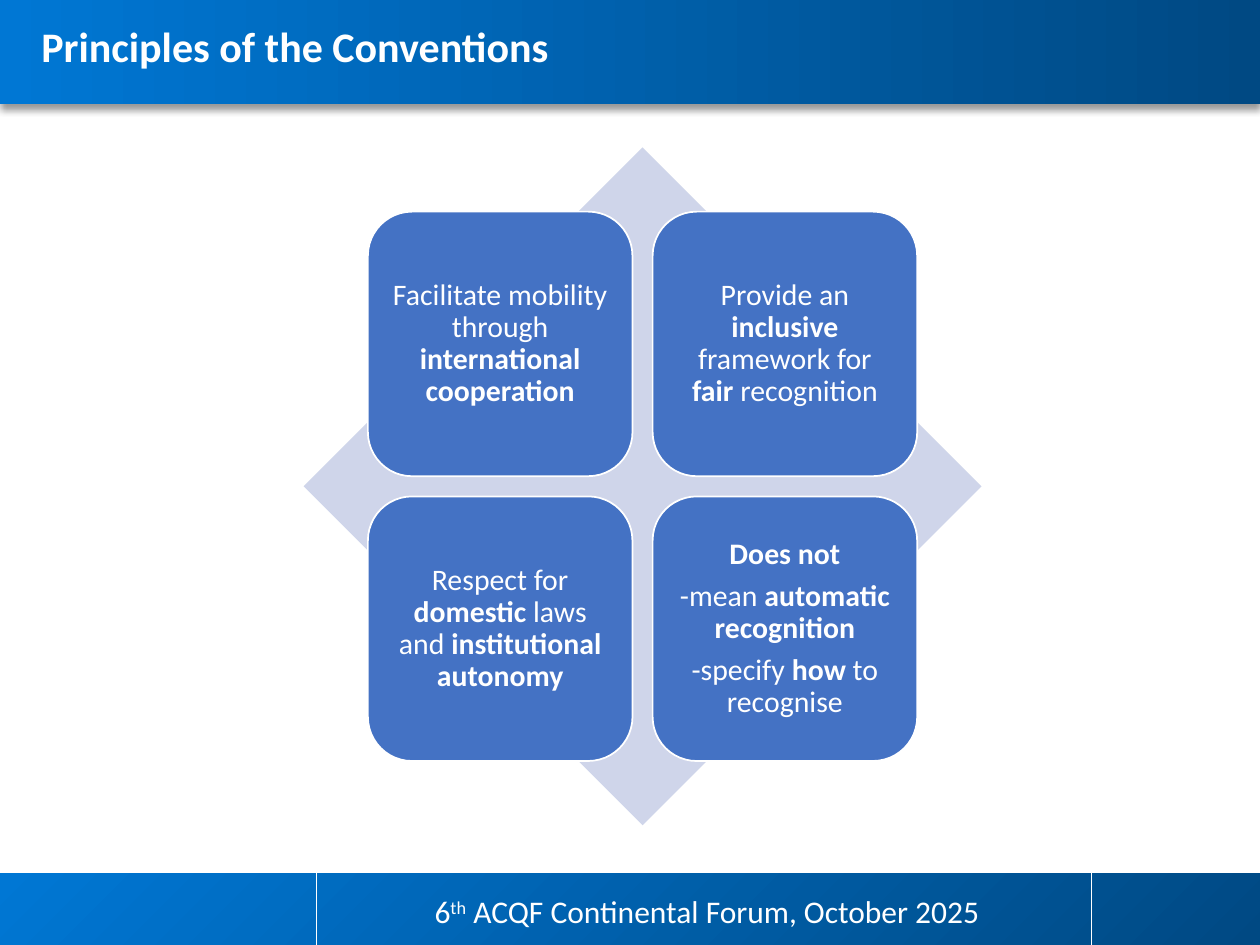
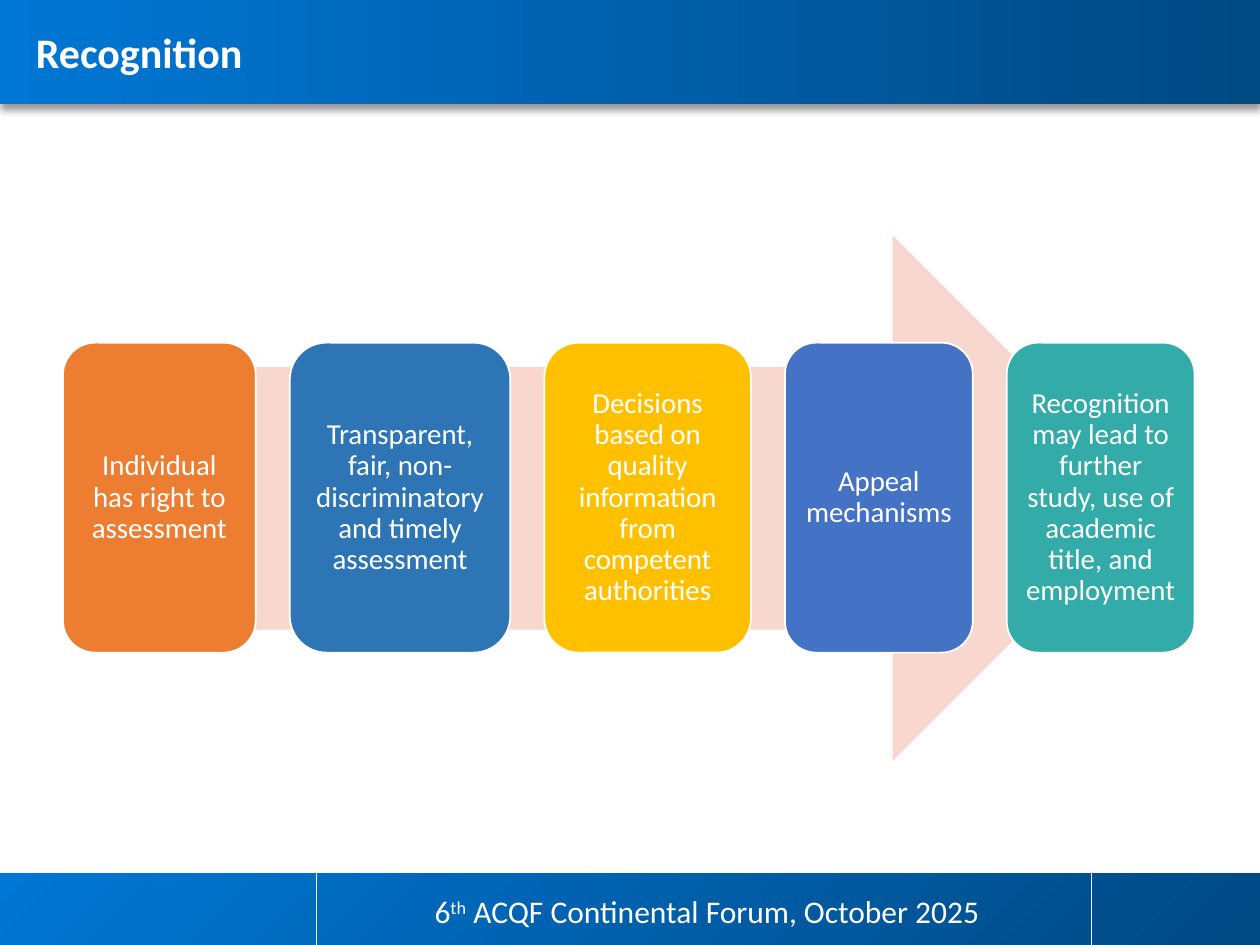
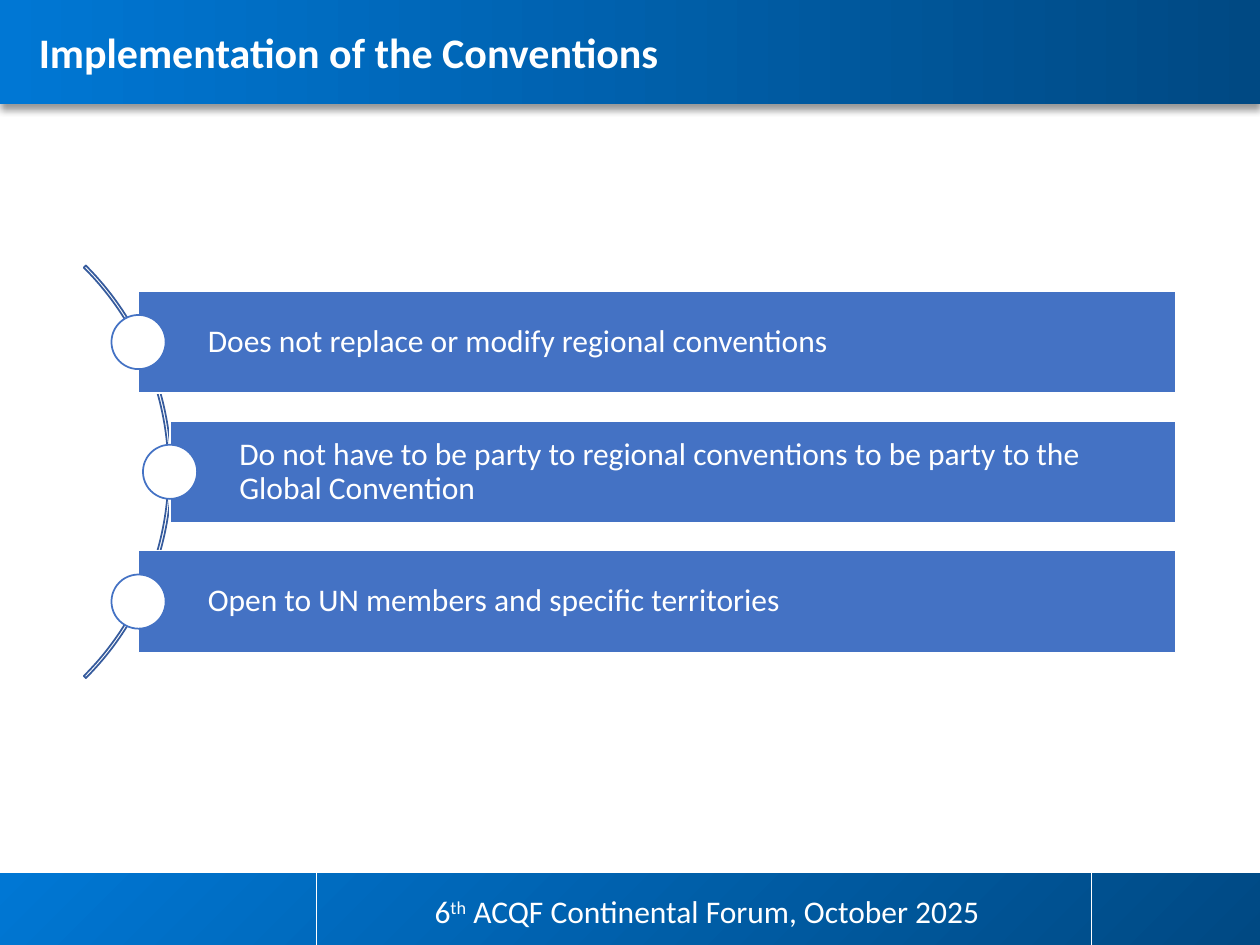
import pptx
import pptx.util
from lxml import etree
from pptx.dml.color import RGBColor
from pptx.enum.shapes import MSO_CONNECTOR, MSO_SHAPE
from pptx.enum.text import MSO_ANCHOR, PP_ALIGN
from pptx.oxml.ns import qn
from pptx.util import Inches, Pt

WHITE = RGBColor(0xFF, 0xFF, 0xFF)
BRIGHT_BLUE = RGBColor(0x00, 0x77, 0xD4)
DEEP_BLUE = RGBColor(0x00, 0x49, 0x83)
BLUE = RGBColor(0x44, 0x72, 0xC4)
STEEL_BLUE = RGBColor(0x2E, 0x75, 0xB6)
ARC_BLUE = RGBColor(0x36, 0x5B, 0x9D)
PALE_BLUE = RGBColor(0xCF, 0xD5, 0xEA)
ORANGE = RGBColor(0xED, 0x7D, 0x31)
YELLOW = RGBColor(0xFF, 0xC0, 0x00)
TEAL = RGBColor(0x33, 0xAB, 0xA8)
PALE_ORANGE = RGBColor(0xF8, 0xD7, 0xCE)
FONT = "Calibri"

# Double asterisks switch bold on and off.
FOOTER = ("6", "th", " ACQF Continental Forum, October 2025")
PRINCIPLES = [
    ["Facilitate mobility through **international cooperation**"],
    ["Provide an **inclusive** framework for **fair** recognition"],
    ["Respect for **domestic** laws and **institutional autonomy**"],
    ["**Does not**", "-mean **automatic recognition**", "-specify **how** to recognise"],
]
RECOGNITION_STEPS = [
    ("Individual has right to assessment", 1.53, ORANGE),
    ("Transparent, fair, non-discriminatory and timely assessment", 1.75, STEEL_BLUE),
    ("Decisions based on quality information from competent authorities", 1.64, YELLOW),
    ("Appeal mechanisms", 1.49, BLUE),
    ("Recognition may lead to further study, use of academic title, and employment", 1.49, TEAL),
]
IMPLEMENTATION = [
    (1.1, "Does not replace or modify regional conventions"),
    (1.35, "Do not have to be party to regional conventions to be party to the\nGlobal Convention"),
    (1.1, "Open to UN members and specific territories"),
]


def add_figure(slide, preset, box, fill=None, line=None):
    figure = slide.shapes.add_shape(preset, *map(Inches, box))
    figure.shadow.inherit = False
    if fill is None:
        figure.fill.background()
    else:
        figure.fill.solid()
        figure.fill.fore_color.rgb = fill
    if line is None:
        figure.line.fill.background()
    else:
        figure.line.color.rgb = line
        figure.line.width = Pt(1)
    return figure


def style(font, size, bold=False):
    for attribute, value in {"name": FONT, "size": Pt(size), "bold": bold}.items():
        setattr(font, attribute, value)
    font.color.rgb = WHITE


def write(figure, paragraphs, size, align, margins):
    """Fill a figure with vertically centred text, reading ** as bold marks."""
    frame = figure.text_frame
    frame.word_wrap = True
    frame.vertical_anchor = MSO_ANCHOR.MIDDLE
    for side, margin in zip(("left", "top", "right", "bottom"), margins):
        setattr(frame, f"margin_{side}", Inches(margin))
    for number, text in enumerate(paragraphs):
        paragraph = frame.add_paragraph() if number else frame.paragraphs[0]
        paragraph.alignment = align
        paragraph.line_spacing = 0.9
        if number:
            paragraph.space_before = Pt(5.5)
        for part, words in enumerate(text.split("**")):
            for row, line in enumerate(words.split("\n")):
                if row:
                    paragraph.add_line_break()
                if line:
                    run = paragraph.add_run()
                    run.text = line
                    style(run.font, size, bold=part % 2 == 1)


def add_band(slide, box, colors, angle):
    band = add_figure(slide, MSO_SHAPE.RECTANGLE, box, WHITE)
    band.fill.gradient()
    band.fill.gradient_angle = angle
    for stop, position, color in zip(band.fill.gradient_stops, (0, 1), colors):
        stop.position = position
        stop.color.rgb = color
    return band


def add_drop_shadow(figure):
    effects = figure._element.spPr.find(qn("a:effectLst"))
    shadow = etree.SubElement(effects, qn("a:outerShdw"), blurRad=str(Pt(4)),
                              dist=str(Pt(3)), dir="5400000", rotWithShape="0")
    color = etree.SubElement(shadow, qn("a:srgbClr"), val="000000")
    etree.SubElement(color, qn("a:alpha"), val="40000")


def add_divider(slide, x, top, bottom):
    divider = slide.shapes.add_connector(
        MSO_CONNECTOR.STRAIGHT, *map(Inches, (x, top, x, bottom)))
    divider.line.color.rgb = WHITE
    divider.line.width = Pt(0.5)
    etree.SubElement(divider._element.spPr, qn("a:effectLst"))


def start_slide(deck, title, title_box, align=PP_ALIGN.LEFT, spacing=0.9):
    """Add a slide with its bands, footer and title."""
    slide = deck.slides.add_slide(deck.slide_layouts[6])
    add_band(slide, (0, 6.93, 10, 0.57), (DEEP_BLUE, BRIGHT_BLUE), 135)
    add_drop_shadow(add_band(slide, (0, 0, 10, 0.83), (BRIGHT_BLUE, DEEP_BLUE), 0))
    add_divider(slide, 2.51, 6.92, 7.5)
    add_divider(slide, 8.66, 6.92, 7.5)

    heading = slide.shapes.add_textbox(*map(Inches, title_box)).text_frame
    heading.word_wrap = True
    paragraph = heading.paragraphs[0]
    paragraph.alignment = align
    paragraph.line_spacing = spacing
    run = paragraph.add_run()
    run.text = title
    style(run.font, 24, bold=True)

    footer = slide.shapes.add_textbox(*map(Inches, (3.35, 7.03, 5.09, 0.71))).text_frame
    footer.word_wrap = True
    for words in FOOTER:
        run = footer.paragraphs[0].add_run()
        run.text = words
        style(run.font, 18)
        if words == "th":
            run.font._element.set("baseline", "30000")
    return slide


def add_card(slide, box, color, paragraphs, size):
    card = add_figure(slide, MSO_SHAPE.ROUNDED_RECTANGLE, box, color, WHITE)
    write(card, paragraphs, size, PP_ALIGN.CENTER, [0.07] * 4)


def build_principles(deck):
    slide = start_slide(deck, "Principles of the Conventions", (0.23, 0.16, 5.34, 0.63))
    add_figure(slide, MSO_SHAPE.DIAMOND, (2.41, 1.17, 5.38, 5.38), PALE_BLUE)
    side, pitch = 2.1, 2.26
    for index, paragraphs in enumerate(PRINCIPLES):
        row, column = divmod(index, 2)
        box = (2.92 + column * pitch, 1.68 + row * pitch, side, side)
        add_card(slide, box, BLUE, paragraphs, 17)


def build_recognition(deck):
    slide = start_slide(deck, "Recognition", (-0.64, 0.21, 3.49, 0.5), PP_ALIGN.CENTER)
    add_figure(slide, MSO_SHAPE.RIGHT_ARROW, (0.98, 1.87, 8.19, 4.17), PALE_ORANGE)
    left, gap = 0.5, 0.27
    for step, width, color in RECOGNITION_STEPS:
        add_card(slide, (left, 2.72, width, 2.46), color, [step], 16.5)
        left += width + gap


def build_implementation(deck):
    slide = start_slide(deck, "Implementation of the Conventions",
                        (0.21, 0.16, 6.97, 0.5), spacing=1.0)
    arc = add_figure(slide, MSO_SHAPE.BLOCK_ARC, (-3.27, 1.43, 4.63, 4.63), line=ARC_BLUE)
    for index, value in enumerate((189, 27, 0.005)):
        arc.adjustments[index] = value
    right, height, pitch, dot = 9.33, 0.81, 1.03, 0.43
    for index, (left, statement) in enumerate(IMPLEMENTATION):
        top = 2.31 + index * pitch
        bar = add_figure(slide, MSO_SHAPE.RECTANGLE,
                         (left, top, right - left, height), BLUE, WHITE)
        write(bar, [statement], 18, PP_ALIGN.LEFT, (0.55, 0.05, 0.05, 0.05))
        add_figure(slide, MSO_SHAPE.OVAL,
                   (left - dot / 2, top + (height - dot) / 2, dot, dot), WHITE, BLUE)


def main():
    deck = pptx.Presentation()
    deck.slide_width, deck.slide_height = Inches(10), Inches(7.5)
    build_principles(deck)
    build_recognition(deck)
    build_implementation(deck)
    deck.save("out.pptx")


if __name__ == "__main__":
    main()
